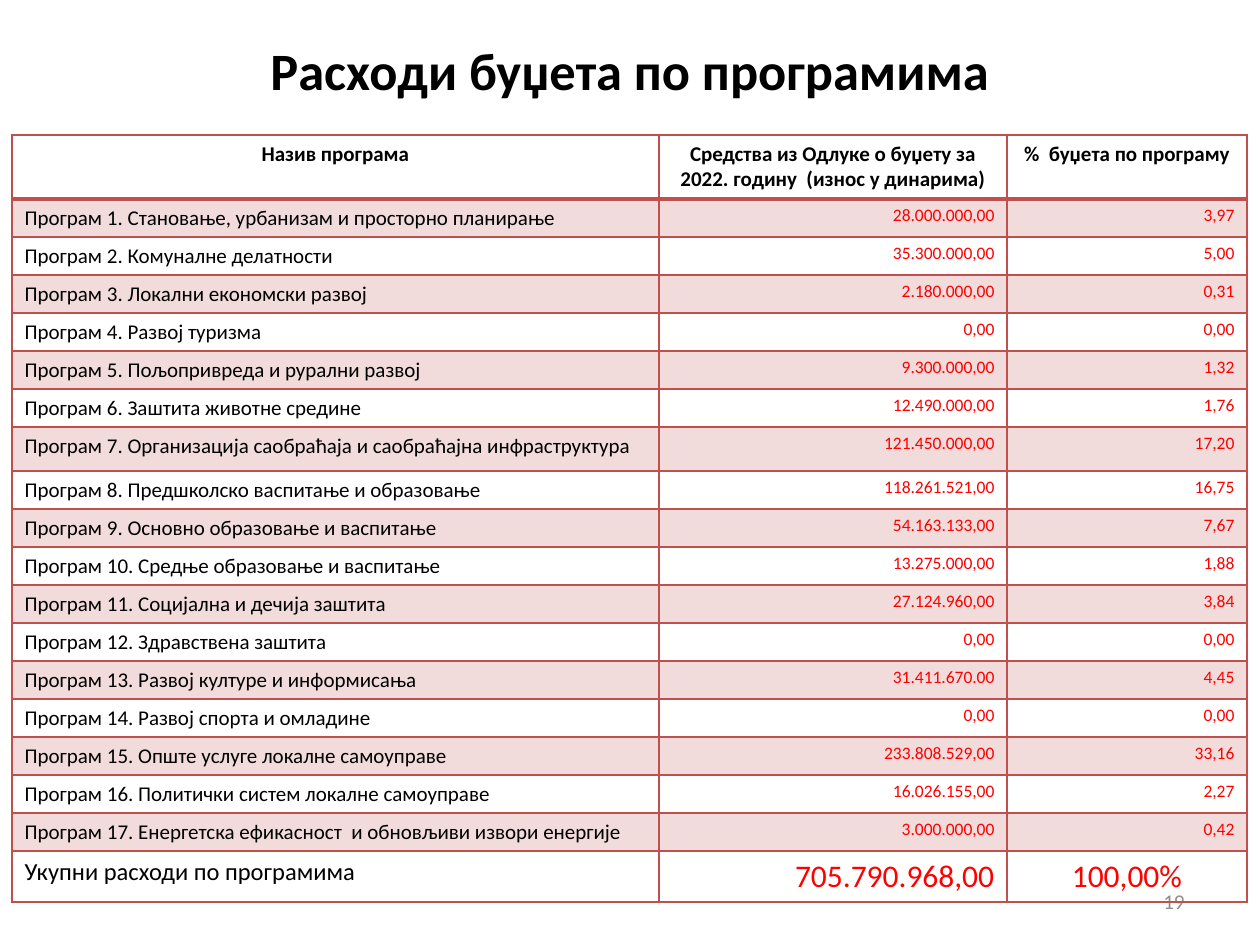
from lxml.etree import SubElement
from pptx import Presentation
from pptx.dml.color import RGBColor
from pptx.enum.text import MSO_ANCHOR, PP_ALIGN
from pptx.oxml.ns import qn
from pptx.util import Emu, Pt

EMU_PER_PX = 914400 / 126
BLACK = RGBColor(0x00, 0x00, 0x00)
RED = RGBColor(0xFF, 0x00, 0x00)
GREY = RGBColor(0x8C, 0x8C, 0x8C)
BORDER = RGBColor(0xC0, 0x50, 0x4D)
BAND = RGBColor(0xF2, 0xDC, 0xDB)

HEADER = [
    "Назив програма",
    "Средства из Одлуке о буџету за 2022. годину  (износ у динарима)",
    "%  буџета по програму",
]
PROGRAMS = [
    ("Становање, урбанизам и просторно планирање", "28.000.000,00", "3,97"),
    ("Комуналне делатности", "35.300.000,00", "5,00"),
    ("Локални економски развој", "2.180.000,00", "0,31"),
    ("Развој туризма", "0,00", "0,00"),
    ("Пољопривреда и рурални развој", "9.300.000,00", "1,32"),
    ("Заштита животне средине", "12.490.000,00", "1,76"),
    ("Организација саобраћаја и саобраћајна инфраструктура", "121.450.000,00", "17,20"),
    ("Предшколско васпитање и образовање", "118.261.521,00", "16,75"),
    ("Основно образовање и васпитање", "54.163.133,00", "7,67"),
    ("Средње образовање и васпитање", "13.275.000,00", "1,88"),
    ("Социјална и дечија заштита", "27.124.960,00", "3,84"),
    ("Здравствена заштита", "0,00", "0,00"),
    ("Развој културе и информисања", "31.411.670.00", "4,45"),
    ("Развој спорта и омладине", "0,00", "0,00"),
    ("Опште услуге локалне самоуправе", "233.808.529,00", "33,16"),
    ("Политички систем локалне самоуправе", "16.026.155,00", "2,27"),
    ("Енергетска ефикасност  и обновљиви извори енергије", "3.000.000,00", "0,42"),
]
TOTAL = ["Укупни расходи по програмима", "705.790.968,00", "100,00%"]


def px(n):
    return Emu(round(n * EMU_PER_PX))


def write(tf, text, size, color, align, bold=False):
    tf.text = text
    tf.word_wrap = True
    p = tf.paragraphs[0]
    p.alignment = align
    font = p.runs[0].font
    font.name = "Calibri"
    font.size = Pt(size)
    font.bold = bold
    font.color.rgb = color


prs = Presentation()
prs.slide_width, prs.slide_height = px(1260), px(945)
s = prs.slides.add_slide(prs.slide_layouts[6])

for box, text, size, color, align, bold in [
    ((93, 16, 1074, 107), "Расходи буџета по програмима", 30, BLACK, PP_ALIGN.CENTER, True),
    ((903, 876, 294, 50), "19", 12, GREY, PP_ALIGN.RIGHT, False),
]:
    tf = s.shapes.add_textbox(*map(px, box)).text_frame
    write(tf, text, size, color, align, bold)
    tf.vertical_anchor = MSO_ANCHOR.MIDDLE

rows = [HEADER]
rows += [(f"Програм {n}. {name}", amount, share)
         for n, (name, amount, share) in enumerate(PROGRAMS, 1)]
rows.append(TOTAL)
last = len(rows) - 1

col_widths = [647, 348, 240]
row_heights = [64] + [38] * len(PROGRAMS) + [51]
row_heights[7] = 44

table = s.shapes.add_table(len(rows), len(col_widths), px(12), px(135),
                           px(sum(col_widths)), px(sum(row_heights))).table
table.first_row = False
table.horz_banding = False
for column, width in zip(table.columns, col_widths):
    column.width = px(width)
for row, height in zip(table.rows, row_heights):
    row.height = px(height)

for i, values in enumerate(rows):
    for j, text in enumerate(values):
        cell = table.cell(i, j)
        if i == 0:
            size, align = 12, PP_ALIGN.CENTER
        elif j == 0:
            size, align = (14 if i == last else 12), PP_ALIGN.LEFT
        else:
            size, align = (18 if i == last else 10), PP_ALIGN.RIGHT
        if i == last and j == 2:
            align = PP_ALIGN.CENTER
        color = RED if i > 0 and j > 0 else BLACK
        write(cell.text_frame, text, size, color, align, bold=i == 0)

        # Borders must precede the fill in the cell properties
        tc_pr = cell._tc.get_or_add_tcPr()
        for side in ("lnL", "lnR", "lnT", "lnB"):
            under_header = (i, side) in ((0, "lnB"), (1, "lnT"))
            ln = SubElement(tc_pr, qn(f"a:{side}"), w=str(Pt(2 if under_header else 1)))
            SubElement(SubElement(ln, qn("a:solidFill")), qn("a:srgbClr"), val=str(BORDER))
        if i % 2 and i < last:
            cell.fill.solid()
            cell.fill.fore_color.rgb = BAND
        else:
            cell.fill.background()

prs.save("out.pptx")
